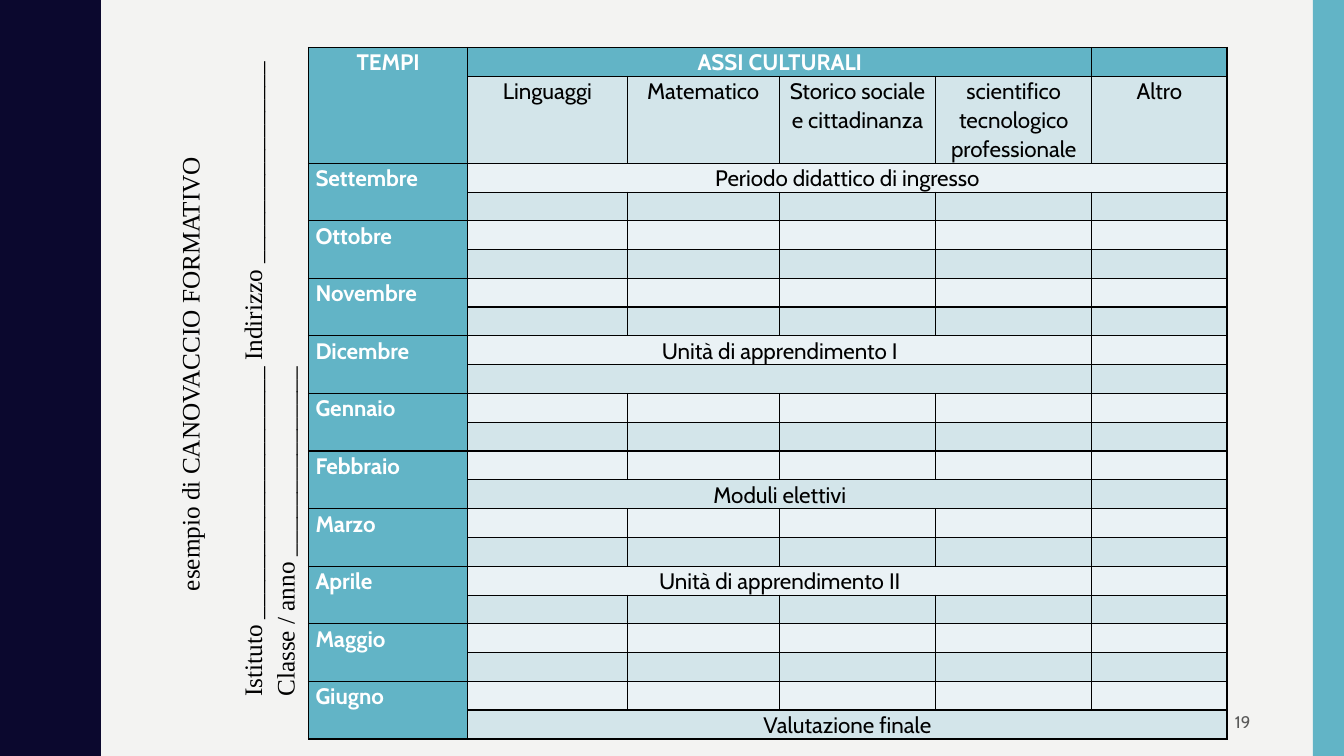
from lxml.etree import SubElement
from pptx import Presentation
from pptx.dml.color import RGBColor
from pptx.enum.shapes import MSO_SHAPE
from pptx.enum.text import MSO_ANCHOR, MSO_AUTO_SIZE, PP_ALIGN
from pptx.oxml.ns import qn
from pptx.util import Inches, Pt

WIDTH, HEIGHT = 13.33, 7.5
COLORS = {"paper": "F3F3F2", "navy": "0B082E", "teal": "62B4C6", "pale": "EAF2F5",
          "mist": "D3E5EA", "ink": "000000", "white": "FFFFFF", "gray": "595959"}
SANS, SERIF = "Cabin", "Times New Roman"
LINE_SPACING = 1.07

MONTHS = ["Settembre", "Ottobre", "Novembre", "Dicembre", "Gennaio",
          "Febbraio", "Marzo", "Aprile", "Maggio", "Giugno"]
AXES = ["Linguaggi", "Matematico", "Storico sociale e cittadinanza",
        "scientifico tecnologico professionale", "Altro"]
ACTIVITIES = {
    ("Settembre", 0): ("Periodo didattico di ingresso", 5),
    ("Dicembre", 0): ("Unità di apprendimento I", 4),
    ("Dicembre", 1): ("", 4),
    ("Febbraio", 1): ("Moduli elettivi", 4),
    ("Aprile", 0): ("Unità di apprendimento II", 4),
    ("Giugno", 1): ("Valutazione finale", 5),
}
COLUMN_WIDTHS = [1.58, 1.58, 1.51, 1.55, 1.55, 1.34]
HEADER_LINES = [1, 3]
HALF_WAVE = [(0.78, 0), (0.78, 0.07), (0.79, 0.14), (0.8, 0.2), (0.81, 0.25),
             (0.83, 0.29), (0.85, 0.33), (0.87, 0.38), (0.89, 0.42), (0.91, 0.46),
             (0.93, 0.5), (0.95, 0.55), (0.96, 0.61), (0.97, 0.68)]
HALF_WAVES = 10


def rgb(name):
    return RGBColor.from_string(COLORS[name])


def write(frame, text, size=16, font=SANS, color="ink", bold=False,
          align=PP_ALIGN.LEFT, spacing=LINE_SPACING):
    paragraph = frame.paragraphs[0]
    paragraph.alignment = align
    paragraph.line_spacing = spacing
    run = paragraph.add_run()
    run.text = text
    run.font.size = Pt(size)
    run.font.name = font
    run.font.bold = bold
    run.font.color.rgb = rgb(color)


def paint(shape, color):
    shape.fill.solid()
    shape.fill.fore_color.rgb = rgb(color)
    shape.line.fill.background()
    shape.shadow.inherit = False


def draw_wave(slide, box):
    left, top, width, height = box
    half = height / HALF_WAVES
    mirror = HALF_WAVE[0][0] + width
    edge = [(left + (mirror - x if index % 2 else x), top + index * half + y)
            for index in range(HALF_WAVES) for x, y in HALF_WAVE]
    edge += [(left + HALF_WAVE[0][0], top + height), (left, top + height)]
    outline = slide.shapes.build_freeform(left, top, scale=Inches(1))
    outline.add_line_segments(edge, close=True)
    paint(outline.convert_to_shape(), "navy")


def draw_band(slide, box):
    band = slide.shapes.add_shape(MSO_SHAPE.RECTANGLE, *map(Inches, box))
    paint(band, "teal")


def turn_upward(shape, box):
    left, top, width, height = box
    shape.left = Inches(left + (width - height) / 2)
    shape.top = Inches(top + (height - width) / 2)
    shape.width, shape.height = Inches(height), Inches(width)
    shape.rotation = 270
    frame = shape.text_frame
    frame.word_wrap = True
    frame.auto_size = MSO_AUTO_SIZE.NONE
    frame.vertical_anchor = MSO_ANCHOR.TOP
    frame.margin_left = frame.margin_right = Inches(0.1)
    frame.margin_top = frame.margin_bottom = Inches(0.05)
    return frame


def add_heading(slide, box):
    left, top, width, height = box
    title_width = width * 0.45
    title = turn_upward(slide.shapes.title, (left, top, title_width, height - 0.06))
    write(title, "esempio di CANOVACCIO FORMATIVO", size=18, font=SERIF,
          align=PP_ALIGN.CENTER)
    fields_box = (left + title_width, top, width - title_width, height)
    fields = turn_upward(slide.shapes.add_textbox(0, 0, 0, 0), fields_box)
    write(fields, f"Istituto {'_' * 20} Indirizzo {'_' * 16} Classe / anno {'_' * 15}",
          size=18, font=SERIF)


def style_cell(cell, fill):
    cell.margin_left = cell.margin_right = Inches(0.07)
    cell.margin_top = cell.margin_bottom = 0
    properties = cell._tc.get_or_add_tcPr()
    for side in ("a:lnL", "a:lnR", "a:lnT", "a:lnB"):
        border = SubElement(properties, qn(side), w=str(Pt(1)))
        solid = SubElement(border, qn("a:solidFill"))
        SubElement(solid, qn("a:srgbClr"), val=COLORS["ink"])
    cell.fill.solid()
    cell.fill.fore_color.rgb = rgb(fill)


def fill_cell(cell, text, **style):
    if text:
        write(cell.text_frame, text, **style)
    else:
        SubElement(cell.text_frame.paragraphs[0]._p, qn("a:endParaRPr"), sz="1000")


def add_calendar(slide, box):
    line_counts = HEADER_LINES + [1] * (2 * len(MONTHS))
    calendar = slide.shapes.add_table(len(line_counts), len(COLUMN_WIDTHS),
                                      *map(Inches, box)).table
    line_height = box[3] / sum(line_counts)
    for column, share in zip(calendar.columns, COLUMN_WIDTHS):
        column.width = Inches(box[2] * share / sum(COLUMN_WIDTHS))
    for index, (row, lines) in enumerate(zip(calendar.rows, line_counts)):
        row.height = Inches(line_height * lines)
        for number, cell in enumerate(row.cells):
            body = "mist" if index % 2 else "pale"
            style_cell(cell, "teal" if number == 0 or index == 0 else body)

    entries = {(0, 0): ("TEMPI", 2, 1), (0, 1): ("ASSI CULTURALI", 1, 4)}
    entries.update({(1, number): (axis, 1, 1) for number, axis in enumerate(AXES, 1)})
    for index, month in enumerate(MONTHS, 1):
        entries[2 * index, 0] = (month, 2, 1)
        for half in (0, 1):
            if (month, half) in ACTIVITIES:
                activity, span = ACTIVITIES[month, half]
                entries[2 * index + half, 1] = (activity, 1, span)

    for row in range(len(line_counts)):
        for column in range(len(COLUMN_WIDTHS)):
            text, down, across = entries.get((row, column), ("", 1, 1))
            cell = calendar.cell(row, column)
            if down * across > 1:
                cell.merge(calendar.cell(row + down - 1, column + across - 1))
            heading = row == 0 or column == 0
            month_name = column == 0 and row > 0
            fill_cell(cell, text, bold=heading, color="white" if heading else "ink",
                      align=PP_ALIGN.LEFT if month_name else PP_ALIGN.CENTER)


def add_page_number(slide, box):
    frame = slide.shapes.add_textbox(*map(Inches, box)).text_frame
    frame.word_wrap = True
    frame.vertical_anchor = MSO_ANCHOR.MIDDLE
    write(frame, "19", size=12, color="gray", align=PP_ALIGN.RIGHT, spacing=1.0)


def main():
    deck = Presentation()
    deck.slide_width, deck.slide_height = Inches(WIDTH), Inches(HEIGHT)
    slide = deck.slides.add_slide(deck.slide_layouts[5])
    slide.background.fill.solid()
    slide.background.fill.fore_color.rgb = rgb("paper")
    draw_wave(slide, (0, 0, 0.97, HEIGHT))
    draw_band(slide, (WIDTH - 0.31, 0, 0.31, HEIGHT))
    add_calendar(slide, (3.06, 0.47, 9.11, 6.85))
    add_heading(slide, (1.66, 0.47, 1.38, 6.54))
    add_page_number(slide, (9.42, 6.97, 3.08, 0.38))
    deck.save("out.pptx")


if __name__ == "__main__":
    main()
